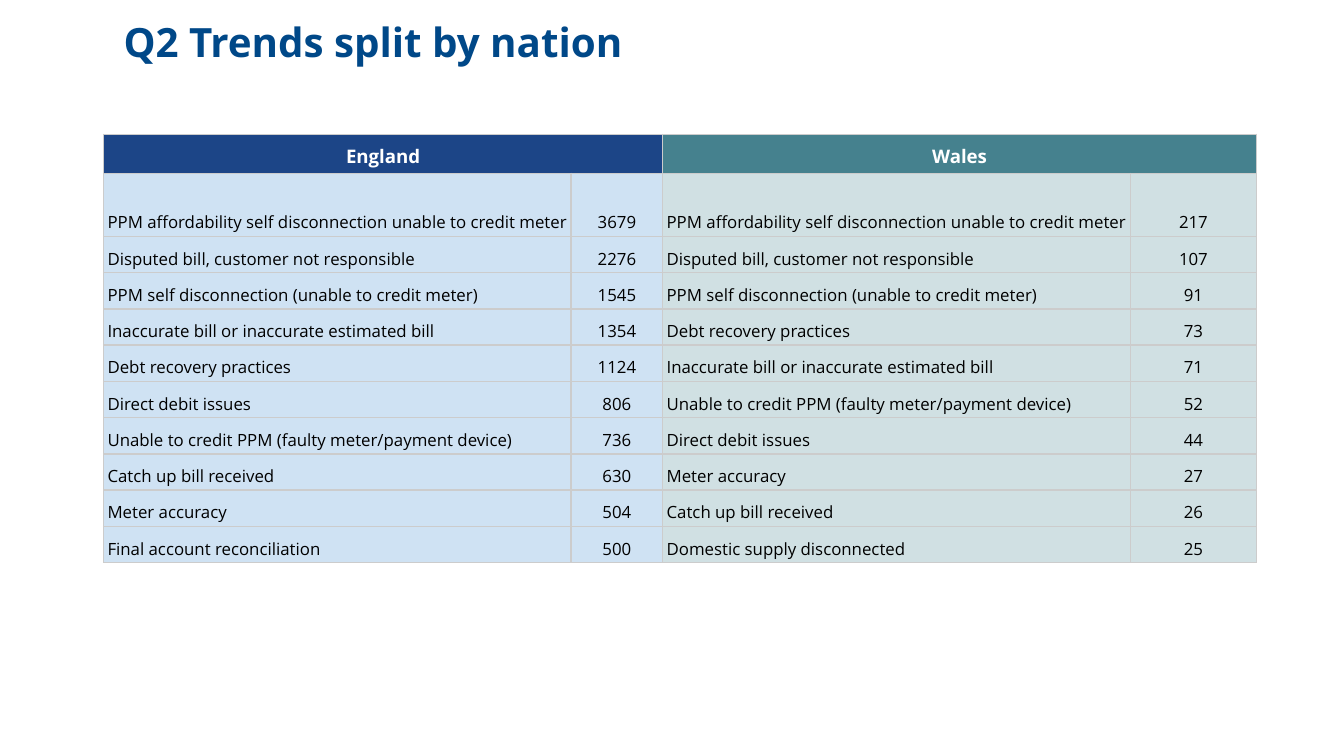
from lxml.etree import SubElement
from pptx import Presentation
from pptx.dml.color import RGBColor
from pptx.enum.text import MSO_ANCHOR, PP_ALIGN
from pptx.oxml.ns import qn
from pptx.util import Inches, Pt

TITLE = "Q2 Trends split by nation"
NATIONS = [
    {
        "name": "England", "header_fill": "1C4587", "body_fill": "CFE2F3",
        "widths": (3.48, 0.68),
        "trends": [
            ("PPM affordability self disconnection unable to credit meter", 3679),
            ("Disputed bill, customer not responsible", 2276),
            ("PPM self disconnection (unable to credit meter)", 1545),
            ("Inaccurate bill or inaccurate estimated bill", 1354),
            ("Debt recovery practices", 1124),
            ("Direct debit issues", 806),
            ("Unable to credit PPM (faulty meter/payment device)", 736),
            ("Catch up bill received", 630),
            ("Meter accuracy", 504),
            ("Final account reconciliation", 500),
        ],
    },
    {
        "name": "Wales", "header_fill": "45818E", "body_fill": "D0E0E3",
        "widths": (3.48, 0.94),
        "trends": [
            ("PPM affordability self disconnection unable to credit meter", 217),
            ("Disputed bill, customer not responsible", 107),
            ("PPM self disconnection (unable to credit meter)", 91),
            ("Debt recovery practices", 73),
            ("Inaccurate bill or inaccurate estimated bill", 71),
            ("Unable to credit PPM (faulty meter/payment device)", 52),
            ("Direct debit issues", 44),
            ("Meter accuracy", 27),
            ("Catch up bill received", 26),
            ("Domestic supply disconnected", 25),
        ],
    },
]
SLIDE_WIDTH = Inches(10)
SLIDE_HEIGHT = SLIDE_WIDTH * 9 // 16
ROW_HEIGHTS = [0.29, 0.47] + [0.27] * 9
COLUMN_WIDTHS = [width for nation in NATIONS for width in nation["widths"]]
BORDER_COLOR = "CCCCCC"
TITLE_FORMAT = {"size": 21.6, "bold": True, "color": "004888"}
HEADER_FORMAT = {"size": 10, "bold": True, "color": "FFFFFF"}
BODY_FORMAT = {"size": 9, "bold": False, "color": "000000"}
HEADER_MARGINS = (0.09, 0.04)
BODY_MARGINS = (0.03, 0.02)


def color(hex_string):
    return RGBColor.from_string(hex_string)


def set_attributes(target, values):
    for name, value in values.items():
        setattr(target, name, value)


def write_text(paragraph, text, text_format):
    run = paragraph.add_run()
    run.text = text
    set_attributes(run.font, {
        "name": "Open Sans",
        "size": Pt(text_format["size"]),
        "bold": text_format["bold"],
    })
    run.font.color.rgb = color(text_format["color"])


def margins(horizontal, vertical):
    return {
        "margin_left": Inches(horizontal), "margin_right": Inches(horizontal),
        "margin_top": Inches(vertical), "margin_bottom": Inches(vertical),
    }


def style_cell(cell, fill, cell_margins):
    set_attributes(cell, margins(*cell_margins))
    cell.vertical_anchor = MSO_ANCHOR.BOTTOM
    properties = cell._tc.get_or_add_tcPr()
    for side in ("a:lnL", "a:lnR", "a:lnT", "a:lnB"):
        line = SubElement(properties, qn(side), w=str(Pt(0.94)))
        solid_fill = SubElement(line, qn("a:solidFill"))
        SubElement(solid_fill, qn("a:srgbClr"), val=BORDER_COLOR)
    cell.fill.solid()
    cell.fill.fore_color.rgb = color(fill)


def write_cell(cell, text, text_format, alignment):
    paragraph = cell.text_frame.paragraphs[0]
    set_attributes(paragraph, {"alignment": alignment, "line_spacing": 1.15})
    write_text(paragraph, text, text_format)


def add_title(slide):
    title = slide.shapes.add_textbox(Inches(0.83), Inches(0.04), Inches(8.1), Inches(0.94))
    set_attributes(title.text_frame, {"word_wrap": True, **margins(0.09, 0.09)})
    write_text(title.text_frame.paragraphs[0], TITLE, TITLE_FORMAT)


def add_trends_table(slide):
    table = slide.shapes.add_table(
        len(ROW_HEIGHTS), len(COLUMN_WIDTHS), Inches(0.77), Inches(1),
        Inches(sum(COLUMN_WIDTHS)), Inches(sum(ROW_HEIGHTS)),
    ).table
    set_attributes(table, {"first_row": False, "horz_banding": False})
    for column, width in zip(table.columns, COLUMN_WIDTHS):
        column.width = Inches(width)
    for row, height in zip(table.rows, ROW_HEIGHTS):
        row.height = Inches(height)

    for nation_index, nation in enumerate(NATIONS):
        left = 2 * nation_index
        header = table.cell(0, left)
        header.merge(table.cell(0, left + 1))
        for column_index in (left, left + 1):
            style_cell(table.cell(0, column_index), nation["header_fill"], HEADER_MARGINS)
        write_cell(header, nation["name"], HEADER_FORMAT, PP_ALIGN.CENTER)
        for row_index, (trend, count) in enumerate(nation["trends"], start=1):
            entries = ((trend, PP_ALIGN.LEFT), (str(count), PP_ALIGN.CENTER))
            for column_index, (text, alignment) in enumerate(entries, start=left):
                cell = table.cell(row_index, column_index)
                style_cell(cell, nation["body_fill"], BODY_MARGINS)
                write_cell(cell, text, BODY_FORMAT, alignment)


def main():
    presentation = Presentation()
    presentation.slide_width = SLIDE_WIDTH
    presentation.slide_height = SLIDE_HEIGHT
    slide = presentation.slides.add_slide(presentation.slide_layouts[6])
    add_title(slide)
    add_trends_table(slide)
    presentation.save("out.pptx")


if __name__ == "__main__":
    main()
